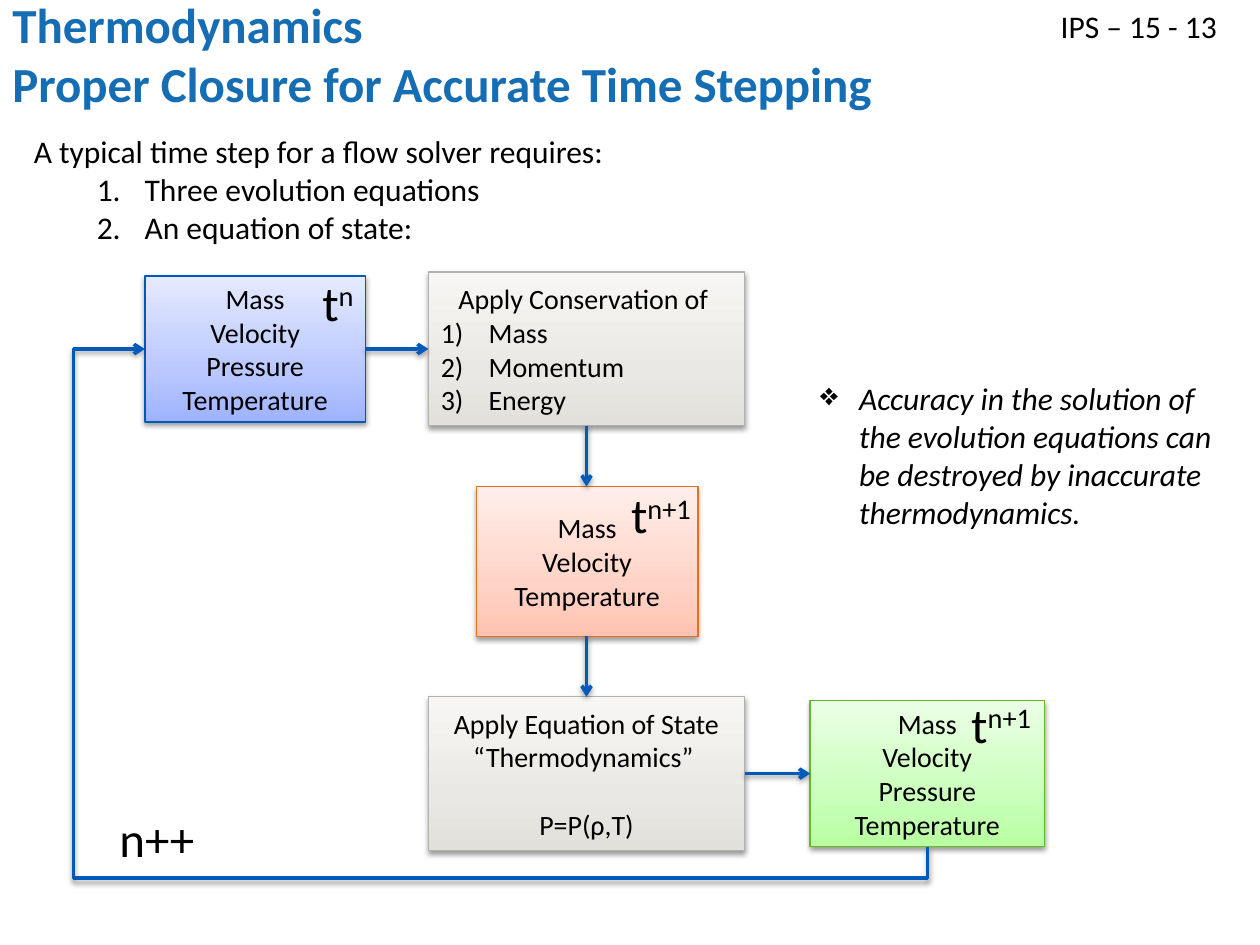
from copy import deepcopy
from dataclasses import dataclass

from lxml.etree import SubElement
from pptx import Presentation
from pptx.dml.color import RGBColor
from pptx.enum.shapes import MSO_CONNECTOR as Link, MSO_SHAPE as Shape
from pptx.enum.text import MSO_ANCHOR as Anchor, PP_ALIGN as Align
from pptx.oxml.ns import qn
from pptx.util import Emu, Inches, Pt

# The slide is a grid of 100 columns by 75 rows
deck = Presentation()
deck.slide_width, deck.slide_height = Inches(10), Inches(7.5)
COLUMN, ROW = deck.slide_width / 100, deck.slide_height / 75
page = deck.slides.add_slide(deck.slide_layouts[6])

BLACK, TITLE_BLUE, ARROW_BLUE = "000000", "156DB3", "005ABB"
BLUE = ("0058B7", "9EB2FF", "BAC8FF", "E5EAFF")
GREY = ("B2B1AC", "E1E0DA", "E9E8E4", "F7F6F4")
ORANGE = ("E3711D", "FFC2B0", "FFD4C7", "FFEEEA")
GREEN = ("63BB25", "B7FFA0", "CBFFBC", "EBFFE5")
STOPS = (0, 0.35, 1)


@dataclass
class Area:
    column: float
    row: float
    columns: float
    rows: float

    def emu(self) -> tuple[Emu, ...]:
        return (Emu(round(self.column * COLUMN)), Emu(round(self.row * ROW)),
                Emu(round(self.columns * COLUMN)), Emu(round(self.rows * ROW)))


@dataclass
class Line:
    text: str
    raised: str = ""
    number: str = ""
    bullet: str = ""
    indent: float = 0
    hang: float = 0
    level: int = 0
    before: float = 0
    align: Align = Align.LEFT


@dataclass
class Step:
    area: Area
    colors: tuple[str, ...]
    lines: list[Line]


def color(value: str) -> RGBColor:
    return RGBColor.from_string(value)


def add_shadow(properties) -> None:
    effects = properties.find(qn("a:effectLst"))
    if effects is None:
        effects = SubElement(properties, qn("a:effectLst"))
    shadow = SubElement(effects, qn("a:outerShdw"), blurRad=str(Pt(3.1)),
                        dist=str(Pt(1.6)), dir="5400000", rotWithShape="0")
    tint = SubElement(shadow, qn("a:srgbClr"), val=BLACK)
    SubElement(tint, qn("a:alpha"), val="38000")


def set_marker(para, line: Line) -> None:
    properties = para._p.get_or_add_pPr()
    properties.set("marL", str(Inches(line.indent)))
    properties.set("indent", str(-Inches(line.hang)))
    if line.number:
        SubElement(properties, qn("a:buAutoNum"), type=line.number)
    elif line.bullet:
        SubElement(properties, qn("a:buChar"), char=line.bullet)


def write(frame, lines: list[Line], size: float, tint: str = BLACK, **extra) -> None:
    style = {"name": "Calibri", "size": Pt(size), **extra}
    for index, line in enumerate(lines):
        para = frame.add_paragraph() if index else frame.paragraphs[0]
        set_marker(para, line)
        para.level, para.alignment = line.level, line.align
        if line.before:
            para.space_before = Pt(line.before)
        for text in filter(None, (line.text, line.raised)):
            span = para.add_run()
            span.text = text
            for name, value in style.items():
                setattr(span.font, name, value)
            span.font.color.rgb = color(tint)
        if line.raised:
            span.font._element.set("baseline", "30000")


def add_text(area: Area, lines: list[Line], size: float, wrap: bool = True,
             anchor: Anchor = Anchor.TOP, **style) -> None:
    frame = page.shapes.add_textbox(*area.emu()).text_frame
    frame.word_wrap, frame.vertical_anchor = wrap, anchor
    write(frame, lines, size, **style)


def add_step(step: Step) -> None:
    box = page.shapes.add_shape(Shape.RECTANGLE, *step.area.emu())
    edge, *shades = step.colors
    box.fill.gradient()
    box.fill.gradient_angle = 90
    stops = box._element.spPr.find(qn("a:gradFill")).find(qn("a:gsLst"))
    stops.append(deepcopy(stops[0]))
    for stop, position, shade in zip(box.fill.gradient_stops, STOPS, shades):
        stop.position, stop.color.rgb = position, color(shade)
    box.line.color.rgb, box.line.width = color(edge), Pt(0.75)
    box.shadow.inherit = False
    add_shadow(box._element.spPr)
    box.text_frame.word_wrap = True
    box.text_frame.vertical_anchor = Anchor.MIDDLE
    write(box.text_frame, step.lines, 16)


def add_arrow(x1: float, y1: float, x2: float, y2: float, kind: Link = Link.STRAIGHT):
    left, top, right, bottom = Area(x1, y1, x2, y2).emu()
    arrow = page.shapes.add_connector(kind, left, top, right, bottom)
    arrow.line.color.rgb, arrow.line.width = color(ARROW_BLUE), Pt(2)
    SubElement(arrow.line._get_or_add_ln(), qn("a:tailEnd"), type="arrow")
    add_shadow(arrow._element.spPr)
    return arrow


def centred(*texts: str) -> list[Line]:
    return [Line(text, align=Align.CENTER) for text in texts]


def numbered(texts: tuple[str, ...], number: str, indent: float, level: int = 0) -> list[Line]:
    return [Line(text, number=number, indent=indent, hang=0.38, level=level) for text in texts]


# Heading, page mark and introduction
add_text(Area(0, 1, 93.3, 6.5),
         [Line("Thermodynamics"), Line("Proper Closure for Accurate Time Stepping")],
         28, anchor=Anchor.MIDDLE, tint=TITLE_BLUE, bold=True)
add_text(Area(83.2, 0.1, 16.8, 4), [Line("IPS – 15 - 13")], 18)
add_text(Area(1.7, 10, 82.6, 10.1),
         [Line("A typical time step for a flow solver requires:"),
          *numbered(("Three evolution equations", "An equation of state:"),
                    "arabicPeriod", 0.88, 1)], 18)

# Boxes of the time step
full_state = centred("Mass", "Velocity", "Pressure", "Temperature")
start = Area(11.5, 21.9, 17.5, 11.6)
conserve = Area(34, 21.6, 25.1, 12.2)
middle = Area(37.8, 38.6, 17.6, 11.9)
close = Area(34, 55.3, 25.1, 12.2)
finish = Area(64.3, 55.6, 18.6, 11.6)
steps = [
    Step(start, BLUE, full_state),
    Step(conserve, GREY, centred("Apply Conservation of ")
         + numbered(("Mass", "Momentum", "Energy"), "arabicParenR", 0.38)),
    Step(middle, ORANGE, centred("Mass", "Velocity", "Temperature")),
    Step(close, GREY, centred("Apply Equation of State", "“Thermodynamics” ")
         + [Line("P=P(ρ,T)", before=19.5, align=Align.CENTER)]),
    Step(finish, GREEN, full_state),
]
for step in steps:
    add_step(step)

# Time labels
for area, level in ((Area(24.6, 21.1, 5.1, 5.7), "n"),
                    (Area(49.1, 38, 7.9, 5.7), "n+1"),
                    (Area(76.1, 54.6, 7.8, 5.7), "n+1")):
    add_text(area, [Line("t", raised=level)], 28)
add_text(Area(8.5, 63.7, 8, 5.7), [Line("n++")], 28, wrap=False)

# Arrows across and down
for before, after in ((start, conserve), (close, finish)):
    height = before.row + before.rows / 2
    add_arrow(before.column + before.columns, height, after.column, height)
center = conserve.column + conserve.columns / 2
for above, below in ((conserve, middle), (middle, close)):
    add_arrow(center, above.row + above.rows, center, below.row)

# Loop back to the start: an elbow turned by a quarter
loop = add_arrow(62.3, 16.4, 22.8, 78.5, Link.ELBOW)
properties = loop._element.spPr
properties.find(qn("a:xfrm")).set("rot", "5400000")
geometry = properties.find(qn("a:prstGeom"))
geometry.set("prst", "bentConnector4")
for name, share in (("adj1", -6300), ("adj2", 109100)):
    SubElement(geometry.find(qn("a:avLst")), qn("a:gd"), name=name, fmla=f"val {share}")

# Remark
add_text(Area(64.1, 29.6, 34.1, 13.1),
         [Line("Accuracy in the solution of the evolution equations can be destroyed "
               "by inaccurate thermodynamics.", bullet="❖", indent=0.31, hang=0.31)],
         18, italic=True)

deck.save("out.pptx")
